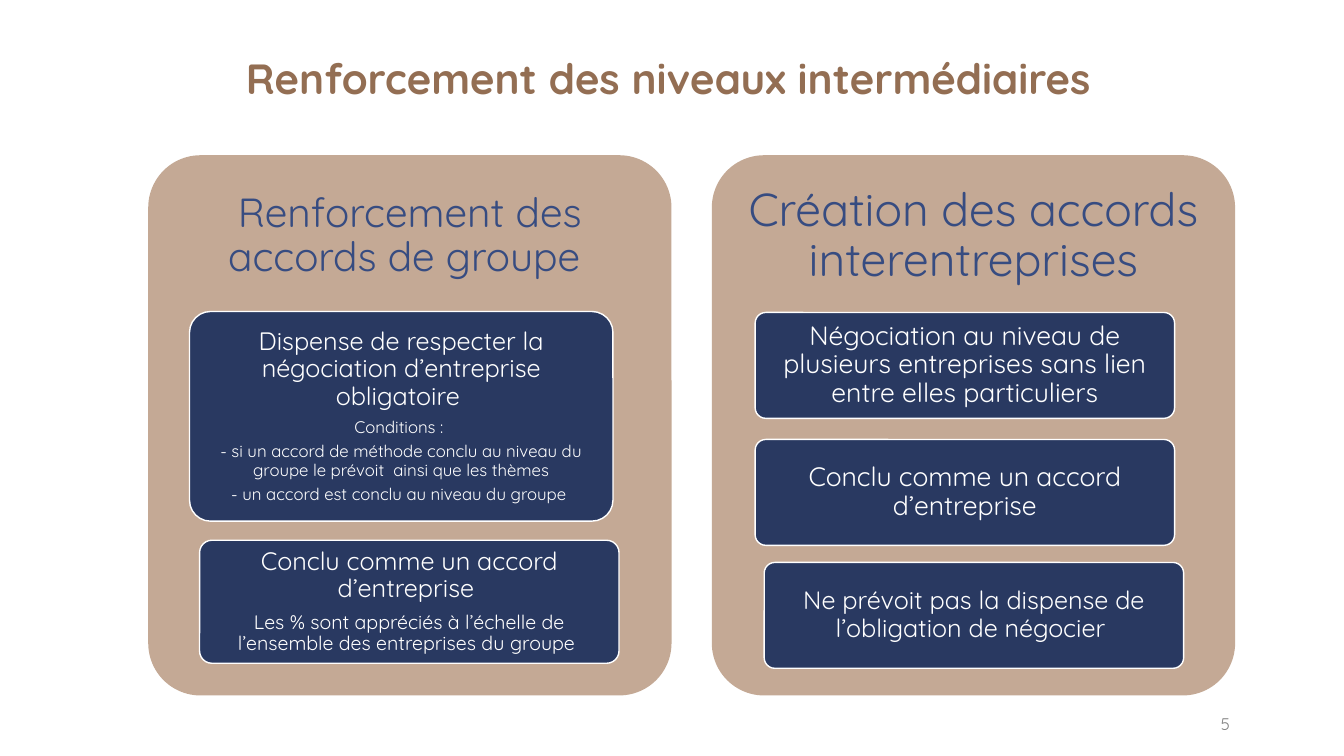
from dataclasses import dataclass

from pptx import Presentation
from pptx.dml.color import RGBColor
from pptx.enum.shapes import MSO_SHAPE
from pptx.enum.text import MSO_ANCHOR, PP_ALIGN
from pptx.shapes.autoshape import Shape
from pptx.slide import Slide
from pptx.util import Inches, Pt

ROUNDED = MSO_SHAPE.ROUNDED_RECTANGLE
MIDDLE, BOTTOM = MSO_ANCHOR.MIDDLE, MSO_ANCHOR.BOTTOM
LEFT, CENTER, RIGHT = PP_ALIGN.LEFT, PP_ALIGN.CENTER, PP_ALIGN.RIGHT

FONT = "Quicksand"
WHITE = RGBColor(0xFF, 0xFF, 0xFF)
BROWN = RGBColor(0x93, 0x6E, 0x53)
SAND = RGBColor(0xC4, 0xA9, 0x95)
BLUE = RGBColor(0x37, 0x4C, 0x81)
NAVY = RGBColor(0x29, 0x39, 0x61)
GRAY = RGBColor(0x80, 0x80, 0x80)

PANEL_TOP, PANEL_WIDTH, PANEL_HEIGHT = 1.54, 5.19, 5.36
HEADING_HEIGHT = 1.61
SPACE_AFTER_RATIO = 0.35


@dataclass(frozen=True)
class Line:
    text: str
    size: float


@dataclass(frozen=True)
class Card:
    left: float
    top: float
    width: float
    height: float
    lines: tuple[Line, ...]


@dataclass(frozen=True)
class Panel:
    left: float
    heading: Line
    inset: float
    cards: tuple[Card, ...]


PANELS = (
    Panel(1.47, Line("Renforcement des accords de groupe ", 29), 0.12, (
        Card(1.88, 3.09, 4.2, 2.08, (
            Line("Dispense de respecter la négociation d’entreprise obligatoire ", 18),
            Line("Conditions : ", 12),
            Line("- si un accord de méthode conclu au niveau du groupe "
                 "le prévoit  ainsi que les thèmes", 12),
            Line("- un accord est conclu au niveau du groupe ", 12),
        )),
        Card(1.98, 5.36, 4.16, 1.22, (
            Line("Conclu comme un accord d’entreprise ", 18),
            Line("Les % sont appréciés à l’échelle de l’ensemble "
                 "des entreprises du groupe ", 14),
        )),
    )),
    Panel(7.06, Line("Création des accords interentreprises", 33), 0.14, (
        Card(7.49, 3.1, 4.16, 1.05, (
            Line("Négociation au niveau de plusieurs entreprises "
                 "sans lien entre elles particuliers", 19),
        )),
        Card(7.49, 4.36, 4.16, 1.05, (
            Line("Conclu comme un accord d’entreprise", 19),
        )),
        Card(7.58, 5.58, 4.16, 1.05, (
            Line("Ne prévoit pas la dispense de l’obligation de négocier ", 18),
        )),
    )),
)


def apply_format(target: object, values: dict[str, object]) -> None:
    for name, value in values.items():
        setattr(target, name, value)


def write_lines(box: Shape, lines: tuple[Line, ...], color: RGBColor,
                inset_x: float, inset_y: float, anchor: MSO_ANCHOR = MIDDLE,
                align: PP_ALIGN = CENTER, spacing: float = 0.9,
                after: float = SPACE_AFTER_RATIO, bold: bool = False) -> None:
    frame = box.text_frame
    apply_format(frame, {
        "word_wrap": True, "vertical_anchor": anchor,
        "margin_left": Inches(inset_x), "margin_right": Inches(inset_x),
        "margin_top": Inches(inset_y), "margin_bottom": Inches(inset_y),
    })
    for index, line in enumerate(lines):
        para = frame.add_paragraph() if index else frame.paragraphs[0]
        apply_format(para, {"alignment": align, "line_spacing": spacing,
                            "space_after": Pt(line.size * after)})
        span = para.add_run()
        span.text = line.text
        apply_format(span.font, {"name": FONT, "size": Pt(line.size), "bold": bold})
        span.font.color.rgb = color


def add_text_box(page: Slide, left: float, top: float,
                 width: float, height: float) -> Shape:
    return page.shapes.add_textbox(
        Inches(left), Inches(top), Inches(width), Inches(height))


def add_rounded_box(page: Slide, left: float, top: float, width: float,
                    height: float, fill: RGBColor) -> Shape:
    box = page.shapes.add_shape(
        ROUNDED, Inches(left), Inches(top), Inches(width), Inches(height))
    box.adjustments[0] = 0.1
    box.shadow.inherit = False
    box.fill.solid()
    box.fill.fore_color.rgb = fill
    box.line.fill.background()
    return box


def add_card(page: Slide, card: Card) -> None:
    box = add_rounded_box(page, card.left, card.top, card.width, card.height, NAVY)
    box.line.color.rgb = WHITE
    box.line.width = Pt(1)
    write_lines(box, card.lines, WHITE, 0.05, 0.04)


def add_panel(page: Slide, panel: Panel) -> None:
    add_rounded_box(page, panel.left, PANEL_TOP, PANEL_WIDTH, PANEL_HEIGHT, SAND)
    heading = add_text_box(page, panel.left, PANEL_TOP, PANEL_WIDTH, HEADING_HEIGHT)
    write_lines(heading, (panel.heading,), BLUE, panel.inset, panel.inset)
    for card in panel.cards:
        add_card(page, card)


def main() -> None:
    deck = Presentation()
    deck.slide_width, deck.slide_height = Inches(13.33), Inches(7.5)
    page = deck.slides.add_slide(deck.slide_layouts[6])

    # Title
    title = add_text_box(page, 2.31, 0.61, 9.03, 0.48)
    write_lines(title, (Line("Renforcement des niveaux intermédiaires", 30.1),),
                BROWN, 0.13, 0.07, BOTTOM, LEFT, spacing=0.85, after=0, bold=True)

    # Panels with their cards
    for panel in PANELS:
        add_panel(page, panel)

    # Page number
    number = add_text_box(page, 11.12, 7, 1.21, 0.35)
    write_lines(number, (Line("5", 12),), GRAY, 0.13, 0.07, BOTTOM, RIGHT,
                spacing=1.0, after=0)

    deck.save("out.pptx")


if __name__ == "__main__":
    main()
